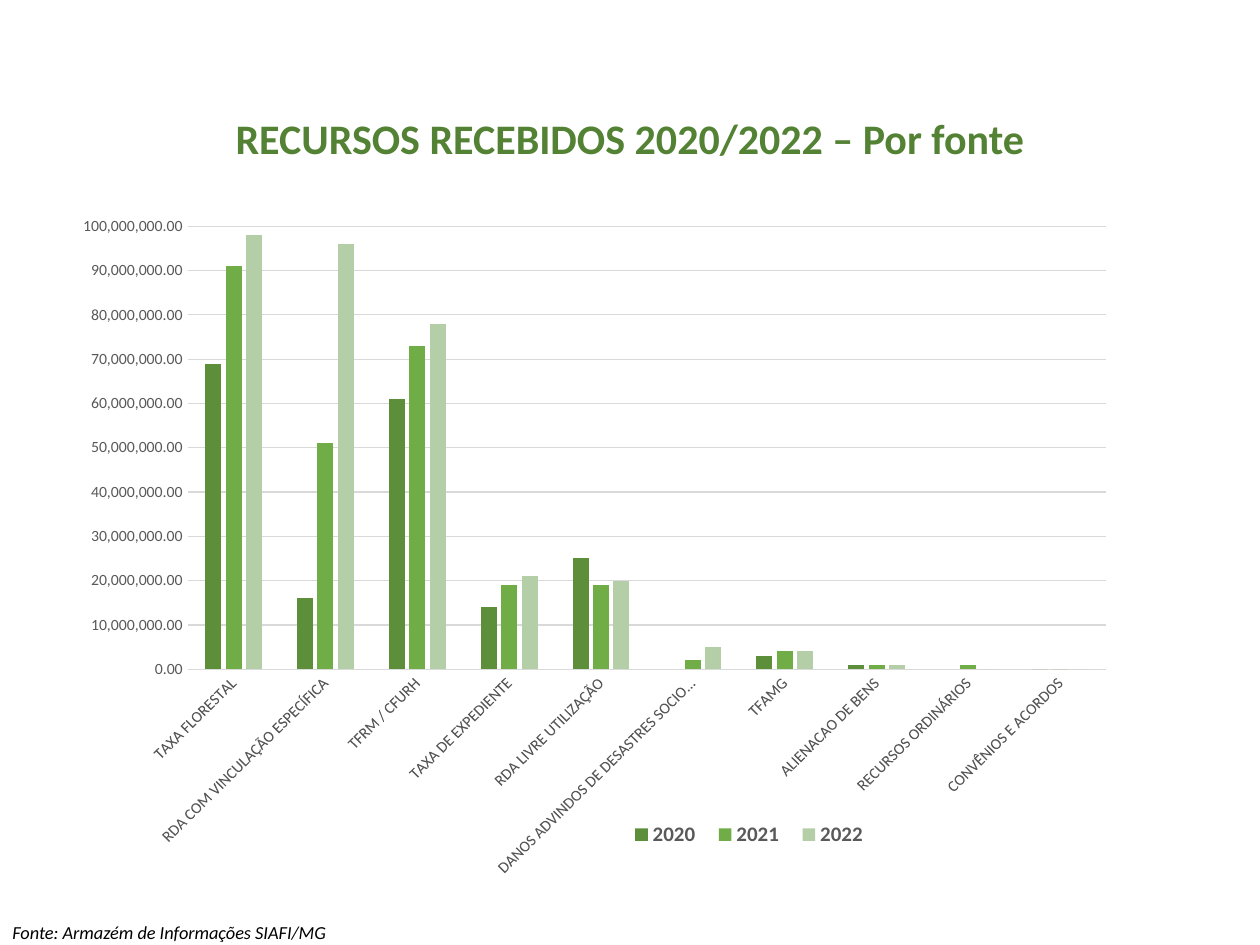
from pptx import Presentation
from pptx.chart.data import CategoryChartData
from pptx.dml.color import RGBColor
from pptx.enum.chart import XL_CHART_TYPE, XL_LEGEND_POSITION, XL_TICK_MARK
from pptx.enum.text import MSO_ANCHOR, PP_ALIGN
from pptx.oxml import parse_xml
from pptx.oxml.ns import nsdecls
from pptx.util import Pt

COLORS = {
    "title": "548235",
    "text": "000000",
    "axis": "595959",
    "grid": "D9D9D9",
    "2020": "5D8F3B",
    "2021": "70AD47",
    "2022": "B4CFA8",
}
FONT = "Calibri"
MILLION = 1_000_000
CATEGORIES = [
    "TAXA FLORESTAL",
    "RDA COM VINCULAÇÃO ESPECÍFICA",
    "TFRM / CFURH",
    "TAXA DE EXPEDIENTE",
    "RDA LIVRE UTILIZAÇÃO",
    "DANOS ADVINDOS DE DESASTRES SOCIOAMBIENTAIS",
    "TFAMG",
    "ALIENACAO DE BENS",
    "RECURSOS ORDINÁRIOS",
    "CONVÊNIOS E ACORDOS",
]
MILLIONS_BY_YEAR = {
    "2020": [69, 16, 61, 14, 25, None, 3, 1, None, 0],
    "2021": [91, 51, 73, 19, 19, 2, 4, 1, 1, 0],
    "2022": [98, 96, 78, 21, 20, 5, 4, 1, 0, 0],
}


def rgb(name):
    return RGBColor.from_string(COLORS[name])


def format_font(font, size, color, bold=False, italic=False):
    font.name = FONT
    font.size = Pt(size)
    font.bold = bold
    font.italic = italic
    font.color.rgb = rgb(color)


def write_text(shape, text, align=PP_ALIGN.LEFT, line_spacing=1.0, **font_format):
    frame = shape.text_frame
    frame.word_wrap = True
    frame.vertical_anchor = MSO_ANCHOR.MIDDLE
    paragraph = frame.paragraphs[0]
    paragraph.alignment = align
    paragraph.line_spacing = line_spacing
    run = paragraph.add_run()
    run.text = text
    format_font(run.font, **font_format)


def add_title(slide, left, top, width, height):
    title = slide.shapes.title
    title.left, title.top = Pt(left), Pt(top)
    title.width, title.height = Pt(width), Pt(height)
    write_text(title, "RECURSOS RECEBIDOS 2020/2022 – Por fonte",
               align=PP_ALIGN.CENTER, line_spacing=0.9,
               size=24, color="title", bold=True)


def manual_layout(left, top, width, height, inner=False):
    target = '<c:layoutTarget val="inner"/>' if inner else ""
    return parse_xml(
        f'<c:layout {nsdecls("c")}><c:manualLayout>{target}'
        '<c:xMode val="edge"/><c:yMode val="edge"/>'
        f'<c:x val="{left}"/><c:y val="{top}"/>'
        f'<c:w val="{width}"/><c:h val="{height}"/>'
        '</c:manualLayout></c:layout>')


def format_axes(chart):
    category_axis, value_axis = chart.category_axis, chart.value_axis
    for axis in (category_axis, value_axis):
        axis.major_tick_mark = XL_TICK_MARK.NONE
        axis.minor_tick_mark = XL_TICK_MARK.NONE
        format_font(axis.tick_labels.font, 9, "axis")
    body = category_axis._element.xpath("c:txPr/a:bodyPr")[0]
    body.set("rot", "-2700000")
    body.set("vert", "horz")
    value_axis.minimum_scale = 0
    value_axis.maximum_scale = 100 * MILLION
    value_axis.major_unit = 10 * MILLION
    value_axis.tick_labels.number_format = "#,##0.00"
    value_axis.tick_labels.number_format_is_linked = False
    value_axis.format.line.fill.background()
    value_axis.has_major_gridlines = True
    for line in (category_axis.format.line, value_axis.major_gridlines.format.line):
        line.color.rgb = rgb("grid")
        line.width = Pt(0.75)


def add_legend(chart):
    chart.has_legend = True
    legend = chart.legend
    legend.position = XL_LEGEND_POSITION.RIGHT
    legend.include_in_layout = False
    format_font(legend.font, 12, "axis", bold=True)
    legend_position = legend._element.xpath("c:legendPos")[0]
    for layout in legend._element.xpath("c:layout"):
        legend._element.remove(layout)
    legend_position.addnext(manual_layout(0.49, 0.92, 0.23, 0.06))


def add_funding_chart(slide, left, top, width, height):
    data = CategoryChartData(number_format="#,##0.00")
    data.categories = CATEGORIES
    for year, amounts in MILLIONS_BY_YEAR.items():
        data.add_series(year, [None if amount is None else amount * MILLION
                               for amount in amounts])
    chart = slide.shapes.add_chart(XL_CHART_TYPE.COLUMN_CLUSTERED, Pt(left), Pt(top),
                                   Pt(width), Pt(height), data).chart
    chart.has_title = False
    format_font(chart.font, 10, "text")
    plot = chart.plots[0]
    plot.gap_width = 219
    plot.overlap = -27
    plot.vary_by_categories = False
    for series in plot.series:
        series.invert_if_negative = False
        series.format.fill.solid()
        series.format.fill.fore_color.rgb = rgb(series.name)
    format_axes(chart)
    add_legend(chart)
    plot_area = chart._chartSpace.xpath("c:chart/c:plotArea")[0]
    for layout in plot_area.xpath("c:layout"):
        plot_area.remove(layout)
    plot_area.insert(0, manual_layout(0.11, 0.03, 0.81, 0.67, inner=True))


def add_source(slide, left, top, width, height):
    box = slide.shapes.add_textbox(Pt(left), Pt(top), Pt(width), Pt(height))
    write_text(box, "Fonte: Armazém de Informações SIAFI/MG",
               size=10.5, color="text", italic=True)


def main():
    presentation = Presentation()
    presentation.slide_width, presentation.slide_height = Pt(720), Pt(540)
    slide = presentation.slides.add_slide(presentation.slide_layouts[5])
    add_funding_chart(slide, 36, 118, 648, 383)
    add_title(slide, 36, 52, 648, 57)
    add_source(slide, 0, 525.6, 572.4, 14.4)
    presentation.save("out.pptx")


if __name__ == "__main__":
    main()
